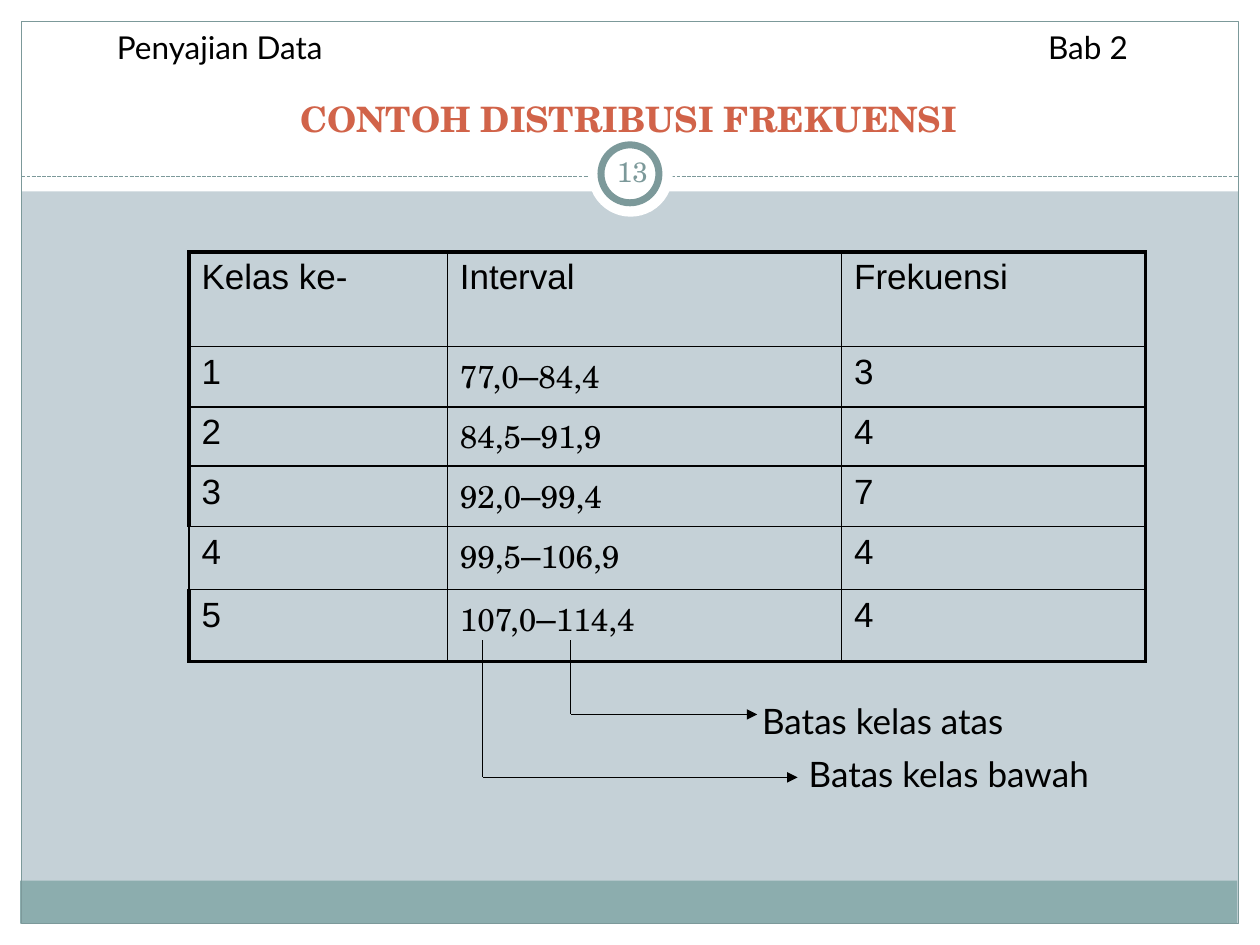
import pptx
import pptx.dml.color
import pptx.enum.dml
import pptx.enum.shapes
import pptx.enum.text
import pptx.oxml
import pptx.oxml.ns
import pptx.util
from pptx.util import Inches

SHAPE = pptx.enum.shapes.MSO_SHAPE
ALIGN = pptx.enum.text.PP_ALIGN
ANCHOR = pptx.enum.text.MSO_ANCHOR
COLORS = {"back": "C5D1D7", "white": "FFFFFF", "band": "8CADAE",
          "frame": "7C999A", "title": "D16349", "ink": "000000"}
SERIF, SANS, LABEL = "TeX Gyre Schola", "Arial", "Lato"


def color(name):
    return pptx.dml.color.RGBColor.from_string(COLORS[name])


def add_xml(parent, tag, inner="", attributes=""):
    namespace = pptx.oxml.ns.nsdecls("a")
    parent.append(pptx.oxml.parse_xml(
        f"<a:{tag} {namespace} {attributes}>{inner}</a:{tag}>"))


class SlideBuilder:
    def __init__(self, page):
        self.page = page
        page.background.fill.solid()
        page.background.fill.fore_color.rgb = color("back")

    def style(self, font, name, size, ink="ink", bold=False):
        font.name, font.size, font.bold = name, pptx.util.Pt(size), bold
        font.color.rgb = color(ink)

    def shape(self, kind, left, top, width, height, fill=None, line=None, weight=0.75):
        shape = self.page.shapes.add_shape(
            kind, Inches(left), Inches(top), Inches(width), Inches(height))
        shape.shadow.inherit = False
        if fill:
            shape.fill.solid()
            shape.fill.fore_color.rgb = color(fill)
        else:
            shape.fill.background()
        if line:
            shape.line.color.rgb = color(line)
            shape.line.width = pptx.util.Pt(weight)
        else:
            shape.line.fill.background()

    def line(self, start, end, ink="ink", dashed=False, arrow=False):
        line = self.page.shapes.add_connector(
            pptx.enum.shapes.MSO_CONNECTOR.STRAIGHT, *map(Inches, start + end))
        line.line.color.rgb = color(ink)
        line.line.width = pptx.util.Pt(0.75)
        if dashed:
            line.line.dash_style = pptx.enum.dml.MSO_LINE.SQUARE_DOT
        if arrow:
            add_xml(line.line._get_or_add_ln(), "tailEnd", attributes='type="triangle"')
        add_xml(line._element.spPr, "effectLst")

    def text(self, words, left, top, width, height, font=LABEL, size=20, ink="ink"):
        box = self.page.shapes.add_textbox(
            Inches(left), Inches(top), Inches(width), Inches(height))
        box.text_frame.word_wrap = True
        para = box.text_frame.paragraphs[0]
        para.text = words
        self.style(para.font, font, size, ink)
        return box.text_frame

    def title(self, words, left, top, width, height):
        title = self.page.shapes.title
        title.left, title.top = Inches(left), Inches(top)
        title.width, title.height = Inches(width), Inches(height)
        frame = title.text_frame
        frame.text = words
        frame.vertical_anchor = ANCHOR.BOTTOM
        frame.paragraphs[0].alignment = ALIGN.CENTER
        self.style(frame.paragraphs[0].font, SERIF, 20, "title", True)
        # Bring the title in front of the white band
        self.page.shapes._spTree.append(title._element)

    def cell(self, cell, words, borders):
        para = cell.text_frame.paragraphs[0]
        lower, dash, upper = words.partition("–")
        parts = [(lower, SERIF, 18), (dash, SANS, 20), (upper, SERIF, 18)]
        for part, font, size in parts if dash else [(words, SANS, 20)]:
            span = para.add_run()
            span.text = part
            self.style(span.font, font, size)
        for side, weight in borders.items():
            add_xml(cell._tc.get_or_add_tcPr(), f"ln{side}",
                    f'<a:solidFill><a:srgbClr val="{COLORS["ink"]}"/></a:solidFill>',
                    f'w="{pptx.util.Pt(weight)}"')
        cell.fill.background()

    def table(self, rows, left, top, widths, heights, thin_left):
        table = self.page.shapes.add_table(
            len(rows), len(widths), Inches(left), Inches(top),
            Inches(sum(widths)), Inches(sum(heights))).table
        table.first_row = table.horz_banding = False
        for column, width in zip(table.columns, widths):
            column.width = Inches(width)
        for r, (row, height) in enumerate(zip(rows, heights)):
            table.rows[r].height = Inches(height)
            for c, words in enumerate(row):
                outer = {"L": c == 0 and r != thin_left, "R": c == len(widths) - 1,
                         "T": r == 0, "B": r == len(rows) - 1}
                self.cell(table.cell(r, c), words,
                          {side: 2.25 if edge else 1 for side, edge in outer.items()})

    def callout(self, words, start, corner_y, tip_x, text_box):
        x, y = start
        self.line((x, y), (x, corner_y))
        self.line((x, corner_y), (tip_x, corner_y), arrow=True)
        self.text(words, *text_box)


def main():
    deck = pptx.Presentation()
    deck.slide_width, deck.slide_height = Inches(10), Inches(7.5)
    slide = SlideBuilder(deck.slides.add_slide(deck.slide_layouts[5]))

    # White margins, footer band and frame
    for area in [(0, 7.33, 10, 0.17), (0, 0, 10, 1.52),
                 (0, 0, 0.17, 7.5), (9.83, 0, 0.17, 7.5)]:
        slide.shape(SHAPE.RECTANGLE, *area, fill="white")
    slide.shape(SHAPE.RECTANGLE, 0.16, 6.99, 9.66, 0.34, fill="band")
    slide.shape(SHAPE.RECTANGLE, 0.17, 0.17, 9.66, 7.16, line="frame")
    slide.line((0.17, 1.4), (9.83, 1.4), "frame", dashed=True)

    # Page number badge
    slide.shape(SHAPE.OVAL, 4.67, 1.05, 0.67, 0.67, fill="white")
    slide.shape(SHAPE.OVAL, 4.77, 1.15, 0.46, 0.46, "white", "frame", 4)
    number = slide.text("13", 4.77, 1.12, 0.5, 0.48, SERIF, 16, "frame")
    number.vertical_anchor = ANCHOR.MIDDLE
    number.margin_left = number.margin_right = Inches(0.05)
    number.paragraphs[0].alignment = ALIGN.CENTER

    # Title and running header
    slide.title("CONTOH DISTRIBUSI FREKUENSI", 0.73, 0.58, 8.52, 0.58)
    header = slide.text("Penyajian Data\tBab 2", 0.83, 0.17, 8.33, 0.4, size=18)
    stop = f'<a:tab pos="{Inches(7.39)}" algn="l"/>'
    properties = header.paragraphs[0]._p.get_or_add_pPr()
    add_xml(properties, "tabLst", stop)
    properties.insert(0, properties[-1])

    # Frequency table
    intervals = ["77,0–84,4", "84,5–91,9", "92,0–99,4", "99,5–106,9", "107,0–114,4"]
    rows = [("Kelas ke-", "Interval", "Frekuensi")]
    for number, (interval, count) in enumerate(zip(intervals, "34744"), 1):
        rows.append((str(number), interval, count))
    slide.table(rows, 1.5, 2, [2.05, 3.13, 2.41],
                [0.75, 0.48, 0.47, 0.48, 0.5, 0.57], thin_left=4)

    # Class limit callouts
    slide.callout("Batas kelas bawah", (3.83, 5.08), 6.17, 6.33, (6.32, 5.92, 3.5, 0.43))
    slide.callout("Batas kelas atas", (4.53, 5.08), 5.67, 6.01, (5.95, 5.5, 2.88, 0.43))

    deck.save("out.pptx")


if __name__ == "__main__":
    main()
